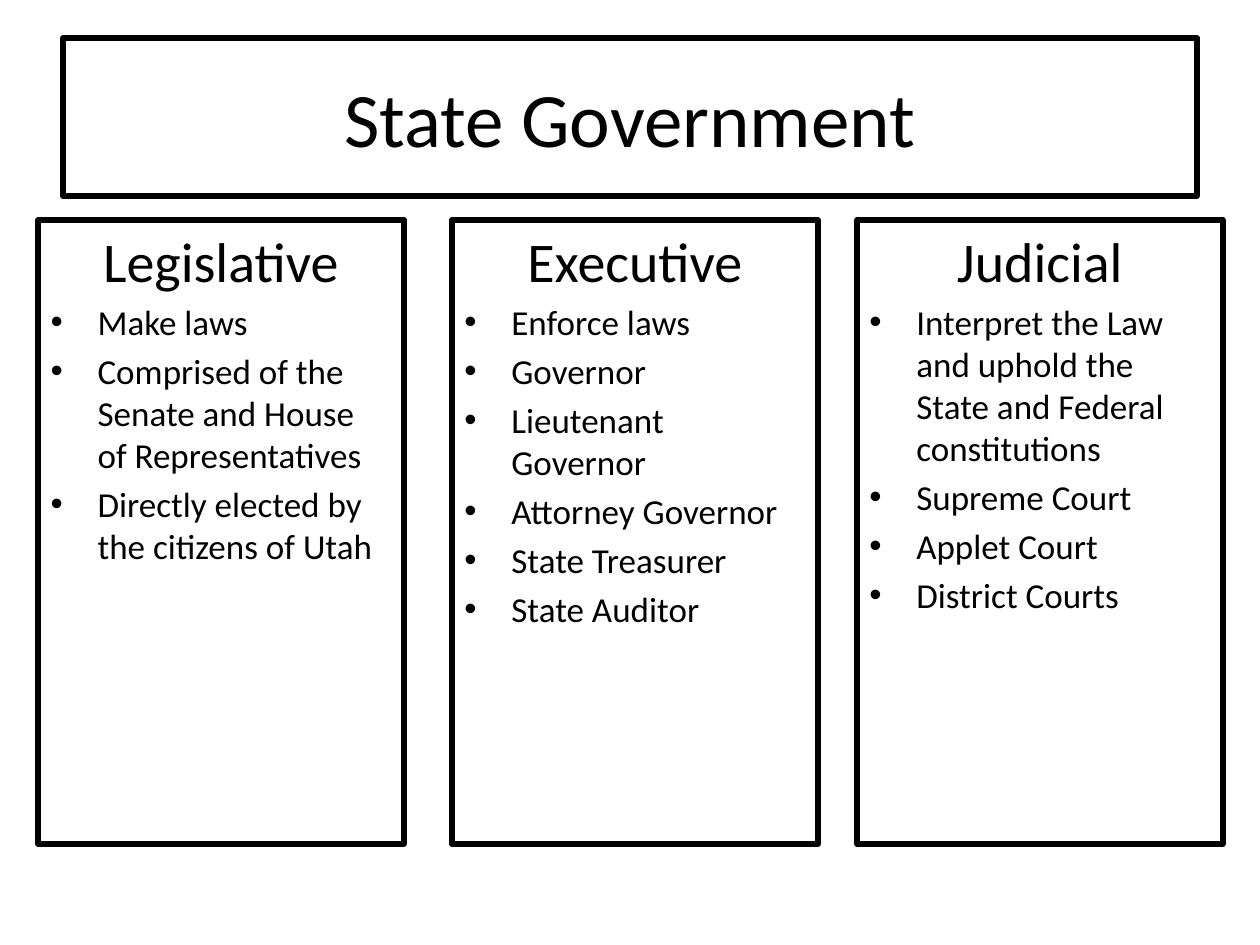
"""Build a slide that compares the three branches of state government."""
import lxml.etree
import pptx
import pptx.dml.color
import pptx.enum.text
import pptx.oxml.ns
import pptx.util

PX_PER_INCH = 126
COLUMN_TOP, COLUMN_WIDTH, COLUMN_HEIGHT = 220, 366, 624
INDENT = 47
BLACK = "000000"
BRANCHES = [
    (38, "Legislative", [
        "Make laws",
        "Comprised of the Senate and House of Representatives",
        "Directly elected by the citizens of Utah",
    ]),
    (452, "Executive", [
        "Enforce laws",
        "Governor",
        "Lieutenant Governor",
        "Attorney Governor",
        "State Treasurer",
        "State Auditor",
    ]),
    (857, "Judicial", [
        "Interpret the Law and uphold the State and Federal constitutions",
        "Supreme Court",
        "Applet Court",
        "District Courts",
    ]),
]


def px(length):
    return pptx.util.Emu(round(length * 914400 / PX_PER_INCH))


def color(hex_code):
    return pptx.dml.color.RGBColor.from_string(hex_code)


def frame(box, left, top, width, height, anchor):
    box.left, box.top, box.width, box.height = map(px, (left, top, width, height))
    box.line.color.rgb = color(BLACK)
    box.line.width = pptx.util.Pt(3)
    box.text_frame.word_wrap = True
    box.text_frame.auto_size = pptx.enum.text.MSO_AUTO_SIZE.NONE
    box.text_frame.vertical_anchor = anchor


def write(paragraph, text, size, align, space_before=0):
    paragraph.alignment = align
    paragraph.space_before = pptx.util.Pt(space_before)
    run = paragraph.add_run()
    run.text = text
    run.font.name = "Calibri"
    run.font.size = pptx.util.Pt(size)
    run.font.color.rgb = color(BLACK)


def set_bullet(paragraph, symbol=None):
    properties = paragraph._p.get_or_add_pPr()
    indent = px(INDENT) if symbol else 0
    properties.set("marL", str(indent))
    properties.set("indent", str(-indent))
    qn = pptx.oxml.ns.qn
    if symbol:
        lxml.etree.SubElement(properties, qn("a:buFont"), typeface="Arial")
        lxml.etree.SubElement(properties, qn("a:buChar"), char=symbol)
    else:
        lxml.etree.SubElement(properties, qn("a:buNone"))


def fill_branch(box, left, name, duties):
    frame(box, left, COLUMN_TOP, COLUMN_WIDTH, COLUMN_HEIGHT,
          pptx.enum.text.MSO_ANCHOR.TOP)
    heading = box.text_frame.paragraphs[0]
    write(heading, name, 32, pptx.enum.text.PP_ALIGN.CENTER, 6.4)
    set_bullet(heading)
    for duty in duties:
        item = box.text_frame.add_paragraph()
        write(item, duty, 20, pptx.enum.text.PP_ALIGN.LEFT, 4)
        set_bullet(item, "•")


def main():
    deck = pptx.Presentation()
    deck.slide_width, deck.slide_height = px(1260), px(945)
    slide = deck.slides.add_slide(deck.slide_layouts[1])

    title = slide.shapes.title
    frame(title, 63, 38, 1134, 158, pptx.enum.text.MSO_ANCHOR.MIDDLE)
    write(title.text_frame.paragraphs[0], "State Government", 44,
          pptx.enum.text.PP_ALIGN.CENTER)

    legislative, *others = BRANCHES
    fill_branch(slide.placeholders[1], *legislative)
    for branch in others:
        fill_branch(slide.shapes.add_textbox(0, 0, 0, 0), *branch)

    deck.save("out.pptx")


if __name__ == "__main__":
    main()
